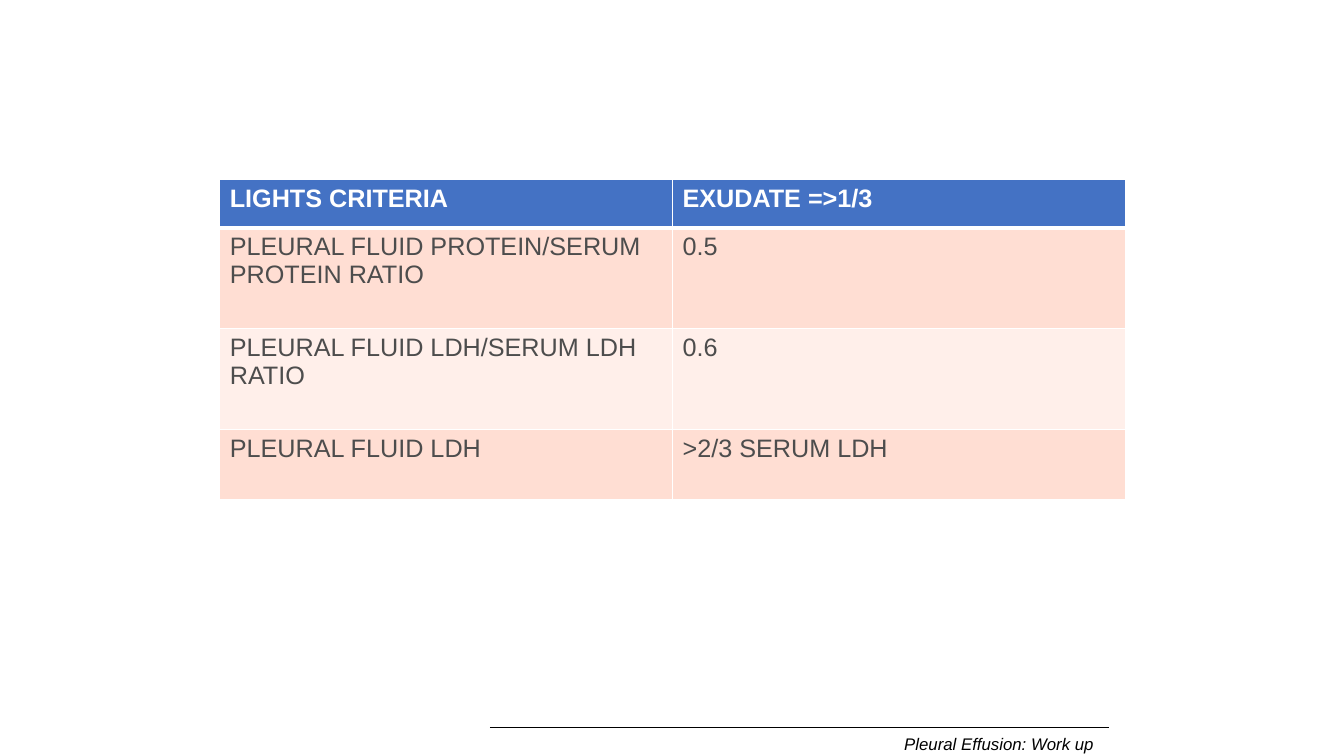
import pptx
import pptx.dml.color
import pptx.enum.shapes
import pptx.oxml
import pptx.oxml.ns
import pptx.util
from lxml import etree

RGBColor = pptx.dml.color.RGBColor
Inches = pptx.util.Inches
Pt = pptx.util.Pt

CRITERIA = [
    ("LIGHTS CRITERIA", "EXUDATE =>1/3"),
    ("PLEURAL FLUID PROTEIN/SERUM PROTEIN RATIO", "0.5"),
    ("PLEURAL FLUID LDH/SERUM LDH RATIO", "0.6"),
    ("PLEURAL FLUID LDH", ">2/3 SERUM LDH"),
]
FOOTER = "Pleural Effusion: Work up"

FONT = "Arial"
WHITE = RGBColor(0xFF, 0xFF, 0xFF)
BLACK = RGBColor(0x00, 0x00, 0x00)
HEADER_BLUE = RGBColor(0x44, 0x72, 0xC4)
BODY_GREY = RGBColor(0x4D, 0x4D, 0x4D)
BANDS = [RGBColor(0xFF, 0xEF, 0xEA), RGBColor(0xFF, 0xDE, 0xD3)]

SLIDE_WIDTH, SLIDE_HEIGHT = 13.33, 7.5
TABLE_LEFT, TABLE_TOP = 2.18, 1.78
COLUMN_WIDTH = 4.49
ROW_HEIGHTS = [0.48, 1, 1, 0.7]
RULE_LEFT, RULE_RIGHT, RULE_Y = 4.86, 11, 7.22
FOOTER_BOX = (8.87, 7.23, 2.14, 0.3)


def style_font(para, size, color, bold=False, italic=False):
    for span in para.runs:
        font = span.font
        font.name, font.size = FONT, Pt(size)
        font.bold, font.italic = bold, italic
        font.color.rgb = color


def set_borders(cell, widths):
    """Draw white borders; widths maps a side letter (L, R, T, B) to points."""
    properties = cell._tc.get_or_add_tcPr()
    for side, width in widths.items():
        properties.append(pptx.oxml.parse_xml(
            f'<a:ln{side} {pptx.oxml.ns.nsdecls("a")} w="{Pt(width)}">'
            f'<a:solidFill><a:srgbClr val="{WHITE}"/></a:solidFill></a:ln{side}>'))


def add_criteria_table(page):
    columns = len(CRITERIA[0])
    table = page.shapes.add_table(
        len(CRITERIA), columns, Inches(TABLE_LEFT), Inches(TABLE_TOP),
        Inches(columns * COLUMN_WIDTH), Inches(sum(ROW_HEIGHTS))).table
    for column in table.columns:
        column.width = Inches(COLUMN_WIDTH)
    for row, texts in enumerate(CRITERIA):
        table.rows[row].height = Inches(ROW_HEIGHTS[row])
        header = row == 0
        for column, text in enumerate(texts):
            cell = table.cell(row, column)
            cell.text = text
            style_font(cell.text_frame.paragraphs[0], 18,
                       WHITE if header else BODY_GREY, bold=header)
            set_borders(cell, {"L": 1, "R": 1, "T": 3 if row == 1 else 1,
                               "B": 3 if header else 1})
            cell.fill.solid()
            cell.fill.fore_color.rgb = HEADER_BLUE if header else BANDS[row % 2]


def add_footer(page):
    rule = page.shapes.add_connector(
        pptx.enum.shapes.MSO_CONNECTOR.STRAIGHT, Inches(RULE_LEFT),
        Inches(RULE_Y), Inches(RULE_RIGHT), Inches(RULE_Y))
    rule.line.color.rgb = BLACK
    rule.line.width = Pt(0.75)
    etree.SubElement(rule._element.spPr, pptx.oxml.ns.qn("a:effectLst"))

    box = page.shapes.add_textbox(*map(Inches, FOOTER_BOX))
    box.text_frame.word_wrap = False
    box.text_frame.text = FOOTER
    style_font(box.text_frame.paragraphs[0], 12, BLACK, italic=True)


def main():
    deck = pptx.Presentation()
    deck.slide_width = Inches(SLIDE_WIDTH)
    deck.slide_height = Inches(SLIDE_HEIGHT)
    page = deck.slides.add_slide(deck.slide_layouts[6])
    add_criteria_table(page)
    add_footer(page)
    deck.save("out.pptx")


if __name__ == "__main__":
    main()
